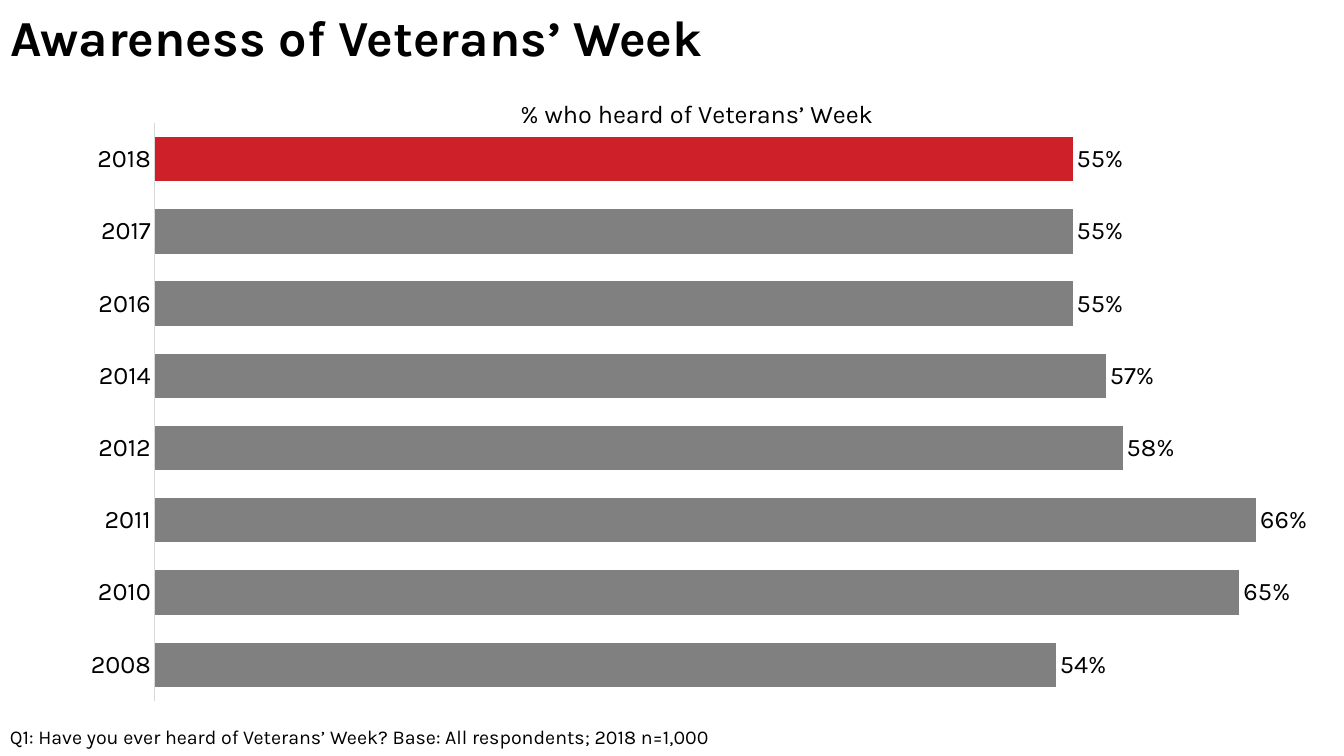
from lxml.etree import SubElement
from pptx import Presentation
from pptx.chart.data import CategoryChartData
from pptx.dml.color import RGBColor
from pptx.enum.chart import XL_CHART_TYPE, XL_LABEL_POSITION, XL_TICK_MARK
from pptx.enum.text import MSO_ANCHOR, MSO_AUTO_SIZE, PP_ALIGN
from pptx.oxml.ns import qn
from pptx.util import Emu, Pt

FONT = "Karla"
BLACK, WHITE, GREY, RED, PALE = "000000", "FFFFFF", "808080", "CE2029", "D9D9D9"
AWARENESS = {
    "2008": 0.54, "2010": 0.65, "2011": 0.66, "2012": 0.58,
    "2014": 0.57, "2016": 0.55, "2017": 0.55, "2018": 0.55,
}


def px(length):
    """Turn pixels (96 to the inch) into EMU."""
    return Emu(length * 9525)


def color(code):
    """Turn a hex string into a colour."""
    return RGBColor.from_string(code)


def paint(fill, code):
    """Give a fill one solid colour."""
    fill.solid()
    fill.fore_color.rgb = color(code)


def style_font(font, size, bold=False):
    """Set the deck's typeface, size and colour on a font."""
    font.name = FONT
    font.size = Pt(size)
    font.bold = bold
    font.color.rgb = color(BLACK)


def set_title(page, text):
    """Fill and place the title placeholder."""
    title = page.shapes.title
    title.left, title.top, title.width, title.height = px(0), px(-2), px(1280), px(81)
    paint(title.fill, WHITE)
    frame = title.text_frame
    frame.text = text
    frame.auto_size = MSO_AUTO_SIZE.NONE
    frame.vertical_anchor = MSO_ANCHOR.MIDDLE
    para = frame.paragraphs[0]
    para.alignment = PP_ALIGN.LEFT
    para.line_spacing = 0.9
    style_font(para.font, 36, bold=True)


def add_footnote(page, text):
    """Add the question note at the foot of the page."""
    box = page.shapes.add_textbox(px(0), px(686), px(1280), px(33))
    frame = box.text_frame
    frame.word_wrap = True
    frame.auto_size = MSO_AUTO_SIZE.SHAPE_TO_FIT_TEXT
    frame.text = text
    style_font(frame.paragraphs[0].font, 14)


def set_layout(parent, index, **settings):
    """Replace a chart part's layout with a manual one."""
    for layout in parent.findall(qn("c:layout")):
        parent.remove(layout)
    layout = SubElement(parent, qn("c:layout"))
    parent.insert(index, layout)
    manual = SubElement(layout, qn("c:manualLayout"))
    for name, value in settings.items():
        SubElement(manual, qn(f"c:{name}")).set("val", str(value))


def add_awareness_chart(page, heading):
    """Add the bar chart of awareness by year, latest year in red."""
    data = CategoryChartData(number_format="0%")
    data.categories = list(AWARENESS)
    data.add_series("Series 1", list(AWARENESS.values()))
    chart = page.shapes.add_chart(
        XL_CHART_TYPE.BAR_CLUSTERED, px(0), px(70), px(1260), px(598), data
    ).chart
    style_font(chart.font, 10)
    chart.has_legend = False
    chart.has_title = True
    title_frame = chart.chart_title.text_frame
    title_frame.text = heading
    style_font(title_frame.paragraphs[0].font, 18)

    years = chart.category_axis
    years.major_tick_mark = XL_TICK_MARK.NONE
    years.format.line.color.rgb = color(PALE)
    years.format.line.width = Pt(0.75)
    style_font(years.tick_labels.font, 18)
    shares = chart.value_axis
    shares.minimum_scale, shares.maximum_scale = 0, 0.7
    shares.has_major_gridlines = False
    shares.visible = False

    plot = chart.plots[0]
    plot.gap_width = 63
    plot.vary_by_categories = False
    series = plot.series[0]
    paint(series.format.fill, GREY)
    paint(series.points[len(AWARENESS) - 1].format.fill, RED)
    labels = series.data_labels
    labels.show_value = True
    labels.position = XL_LABEL_POSITION.OUTSIDE_END
    labels.number_format = "0%"
    labels.number_format_is_linked = False
    style_font(labels.font, 18)

    root = chart.element if hasattr(chart, "element") else chart._chartSpace
    set_layout(root.find(f".//{qn('c:plotArea')}"), 0, layoutTarget="inner",
               xMode="edge", yMode="edge", x=0.117, y=0.079, w=0.883, h=0.921)
    set_layout(root.find(f"{qn('c:chart')}/{qn('c:title')}"), 1,
               xMode="edge", yMode="edge", x=0.39, y=0.03)


def main():
    """Build the one-page deck and save it."""
    deck = Presentation()
    deck.slide_width, deck.slide_height = px(1280), px(720)
    page = deck.slides.add_slide(deck.slide_layouts[5])
    set_title(page, "Awareness of Veterans’ Week")
    add_awareness_chart(page, "% who heard of Veterans’ Week")
    add_footnote(page, "Q1: Have you ever heard of Veterans’ Week? "
                       "Base: All respondents; 2018 n=1,000")
    deck.save("out.pptx")


if __name__ == "__main__":
    main()
